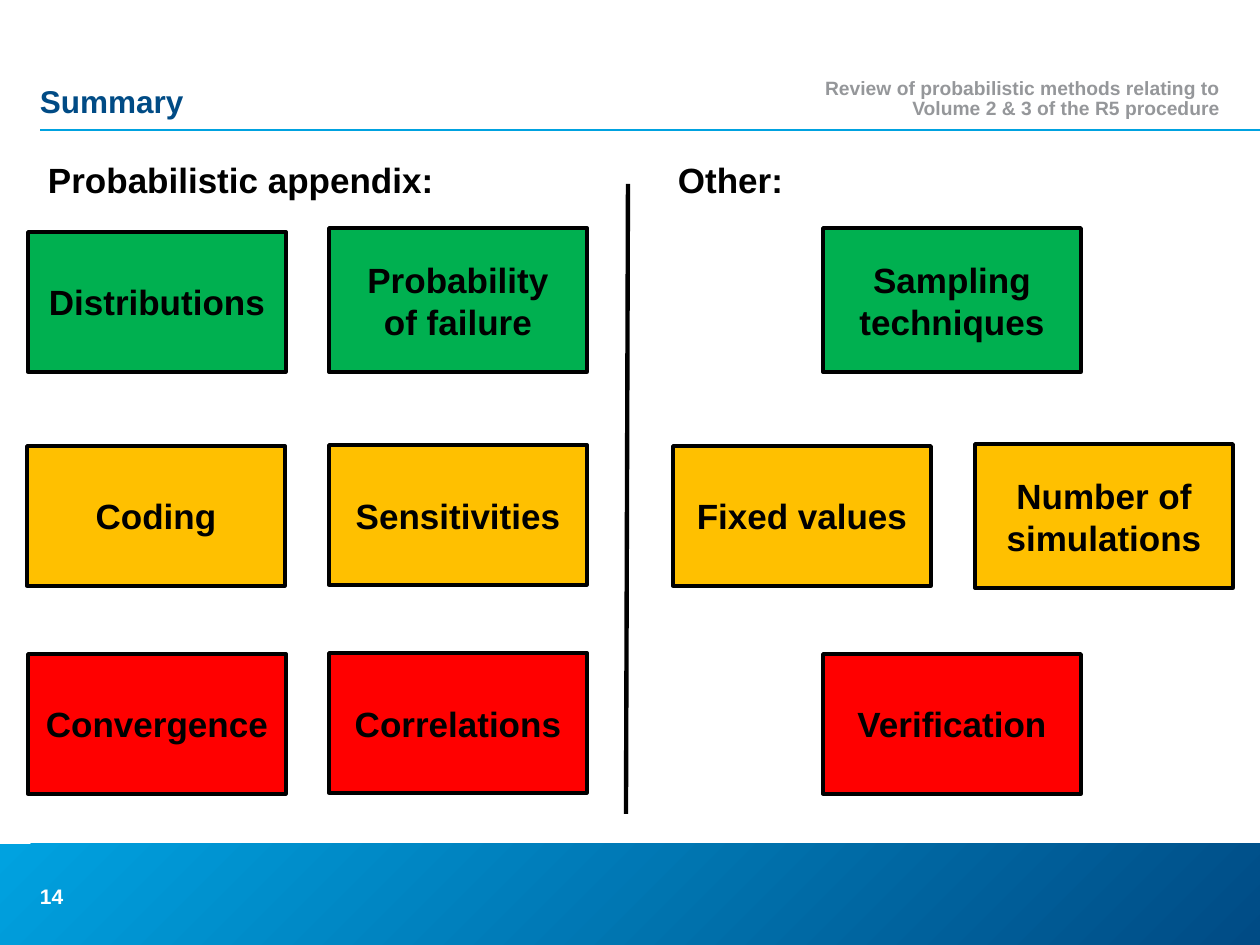
from lxml.etree import SubElement
from pptx import Presentation
from pptx.dml.color import RGBColor
from pptx.enum.shapes import MSO_CONNECTOR as Connector, MSO_SHAPE as Shape
from pptx.enum.text import MSO_ANCHOR as Anchor, MSO_AUTO_SIZE as AutoSize, PP_ALIGN as Align
from pptx.oxml.ns import qn
from pptx.util import Emu, Pt

EMU_PER_PX = 914400 / 126
BLACK, WHITE = "000000", "FFFFFF"
SKY, NAVY, GREY = "00A2E0", "004B85", "95979A"
GREEN, AMBER, RED = "00B050", "FFC000", "FF0000"
TOPIC_WIDTH = 258
TOPIC_HEIGHTS = {1: 140, 2: 144}
TOPICS = [
    ("Distributions", 28, 232, GREEN, 1),
    ("Probability\nof failure", 329, 228, GREEN, 2),
    ("Sampling techniques", 823, 228, GREEN, 2),
    ("Coding", 27, 446, AMBER, 1),
    ("Sensitivities", 329, 445, AMBER, 1),
    ("Fixed values", 673, 446, AMBER, 1),
    ("Number of simulations", 975, 444, AMBER, 2),
    ("Convergence", 28, 654, RED, 1),
    ("Correlations", 329, 653, RED, 1),
    ("Verification", 823, 654, RED, 1),
]


def px(length):
    return Emu(round(length * EMU_PER_PX))


def color(value):
    return RGBColor.from_string(value)


def write(frame, text, size, ink, align=Align.LEFT, anchor=Anchor.MIDDLE, spacing=None):
    frame.text = text
    frame.word_wrap = True
    frame.auto_size = AutoSize.NONE
    frame.vertical_anchor = anchor
    for paragraph in frame.paragraphs:
        paragraph.alignment = align
        paragraph.line_spacing = spacing
        for run in paragraph.runs:
            run.font.name = "Arial"
            run.font.size = Pt(size)
            run.font.bold = True
            run.font.color.rgb = color(ink)


def remove_insets(frame):
    frame.margin_left = frame.margin_right = frame.margin_top = frame.margin_bottom = 0


def add_label(slide, text, left, top, width, height, size, ink, **layout):
    frame = slide.shapes.add_textbox(px(left), px(top), px(width), px(height)).text_frame
    remove_insets(frame)
    write(frame, text, size, ink, **layout)
    return frame


def add_rule(slide, start, end, ink, weight):
    rule = slide.shapes.add_connector(Connector.STRAIGHT, *map(px, start + end))
    rule.line.color.rgb = color(ink)
    rule.line.width = Pt(weight)
    SubElement(rule._element.spPr, qn("a:effectLst"))


def add_footer_band(slide):
    band = slide.shapes.add_shape(Shape.RECTANGLE, 0, px(844), px(1260), px(101))
    band.shadow.inherit = False
    band.line.fill.background()
    band.fill.gradient()
    band.fill.gradient_angle = 315
    for stop, shade in zip(band.fill.gradient_stops, (SKY, NAVY)):
        stop.color.rgb = color(shade)


def set_title(slide, text):
    title = slide.shapes.title
    title.left, title.top, title.width, title.height = map(px, (40, 43, 596, 77))
    remove_insets(title.text_frame)
    write(title.text_frame, text, 18, NAVY, anchor=Anchor.BOTTOM, spacing=0.9)


def add_headings(slide):
    headings = add_label(slide, "Probabilistic appendix:\tOther:", 48, 156, 1160, 46, 20, BLACK)
    stops = SubElement(headings.paragraphs[0]._p.get_or_add_pPr(), qn("a:tabLst"))
    SubElement(stops, qn("a:tab"), pos=str(px(630)), algn="l")


def add_topic(slide, text, left, top, fill, lines):
    box = slide.shapes.add_shape(
        Shape.RECTANGLE, px(left), px(top), px(TOPIC_WIDTH), px(TOPIC_HEIGHTS[lines]))
    box.shadow.inherit = False
    box.fill.solid()
    box.fill.fore_color.rgb = color(fill)
    box.line.color.rgb = color(BLACK)
    box.line.width = Pt(2)
    write(box.text_frame, text, 20, BLACK, align=Align.CENTER)


def main():
    deck = Presentation()
    deck.slide_width, deck.slide_height = px(1260), px(945)
    slide = deck.slides.add_slide(deck.slide_layouts[5])
    set_title(slide, "Summary")
    add_footer_band(slide)
    add_rule(slide, (1260, 130), (40, 130), SKY, 1)
    add_label(slide, "14", 40, 886, 45, 21, 12, WHITE)
    add_label(slide, "Review of probabilistic methods relating to Volume 2 & 3 of the R5 procedure",
              800, 43, 420, 77, 11, GREY, align=Align.RIGHT, anchor=Anchor.BOTTOM, spacing=0.9)
    add_headings(slide)
    add_rule(slide, (628, 184), (626, 814), BLACK, 2.5)
    for topic in TOPICS:
        add_topic(slide, *topic)
    deck.save("out.pptx")


if __name__ == "__main__":
    main()
